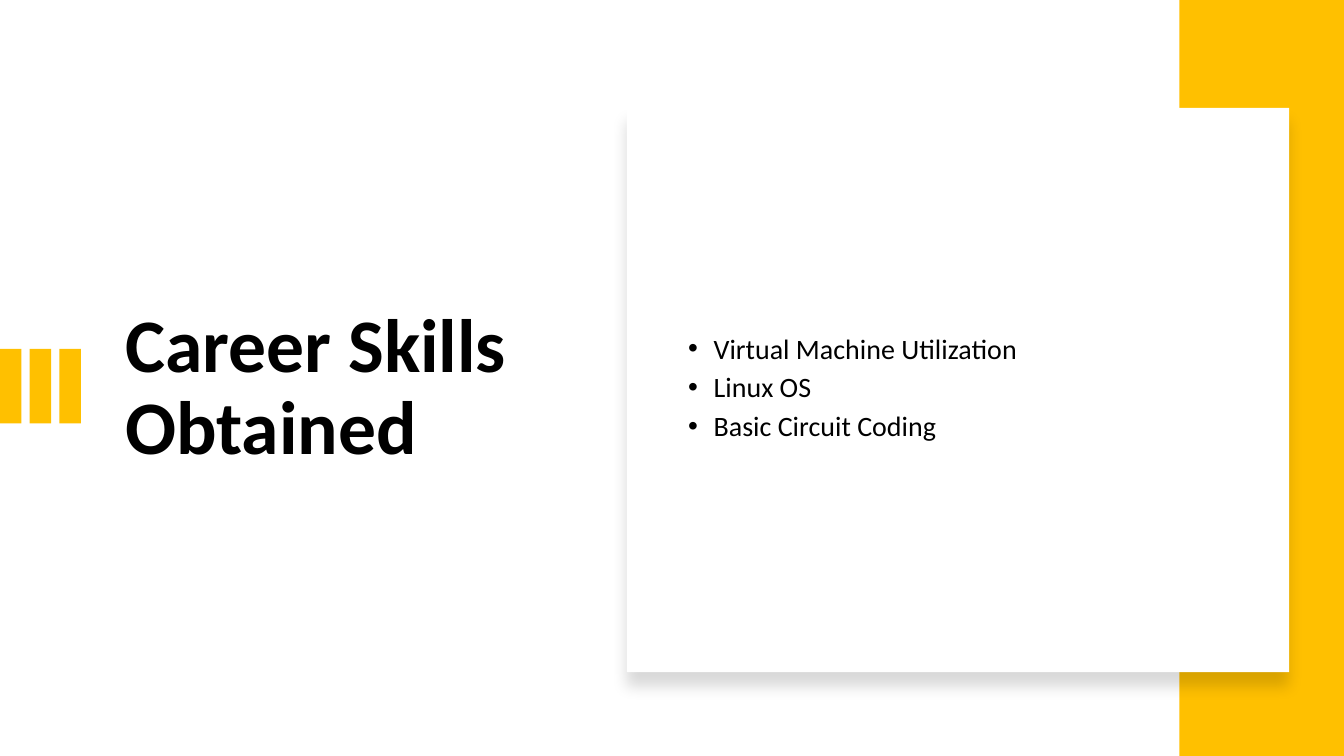
import pptx
import pptx.util
import pptx.dml.color
import pptx.enum.shapes
import pptx.enum.text
import pptx.oxml
import pptx.oxml.ns

Cm = pptx.util.Cm
Pt = pptx.util.Pt
GOLD = pptx.dml.color.RGBColor(0xFF, 0xC0, 0x00)
WHITE = pptx.dml.color.RGBColor(0xFF, 0xFF, 0xFF)
BLACK = pptx.dml.color.RGBColor(0x00, 0x00, 0x00)
SKILLS = ["Virtual Machine Utilization", "Linux OS", "Basic Circuit Coding"]


def add_rectangle(shapes, left, top, width, height, color):
    rectangle = shapes.add_shape(
        pptx.enum.shapes.MSO_SHAPE.RECTANGLE, Cm(left), Cm(top), Cm(width), Cm(height))
    rectangle.shadow.inherit = False
    rectangle.fill.solid()
    rectangle.fill.fore_color.rgb = color
    rectangle.line.fill.background()
    return rectangle


def format_placeholder(placeholder, place, lines, font_format):
    for name, value in place.items():
        setattr(placeholder, name, Cm(value))
    frame = placeholder.text_frame
    frame.text = "\n".join(lines)
    frame.word_wrap = True
    frame.auto_size = pptx.enum.text.MSO_AUTO_SIZE.NONE
    frame.vertical_anchor = pptx.enum.text.MSO_ANCHOR.MIDDLE
    paragraph_format = {"alignment": pptx.enum.text.PP_ALIGN.LEFT, "line_spacing": 0.9,
                        "space_before": Pt(0), "space_after": Pt(6)}
    for para in frame.paragraphs:
        for name, value in paragraph_format.items():
            setattr(para, name, value)
        for span in para.runs:
            span.font.color.rgb = BLACK
            for name, value in font_format.items():
                setattr(span.font, name, value)


deck = pptx.Presentation()
deck.slide_width = Cm(33.87)
deck.slide_height = Cm(19.05)
page = deck.slides.add_slide(deck.slide_layouts[1])
page.background.fill.solid()
page.background.fill.fore_color.rgb = WHITE

# Title
format_placeholder(
    page.shapes.title, {"left": 2.9, "top": 3.71, "width": 10.82, "height": 12.17},
    ["Career Skills Obtained"], {"name": "Calibri", "size": Pt(54), "bold": True})

# Three accent bars at the left edge
accent_bars = page.shapes.add_group_shape()
for index in range(3):
    add_rectangle(accent_bars.shapes, 0.75 * index, 8.79, 0.54, 1.88, GOLD)

# Gold band at the right edge and the white card over it
add_rectangle(page.shapes, 29.72, 0, 4.15, 19.05, GOLD)
card = add_rectangle(page.shapes, 15.8, 2.72, 16.69, 14.22, WHITE)
card_effects = card.element.spPr.find(pptx.oxml.ns.qn("a:effectLst"))
card_effects.append(pptx.oxml.parse_xml(
    f'<a:outerShdw {pptx.oxml.ns.nsdecls("a")} blurRad="{Pt(11)}" dist="{Pt(10)}" '
    'dir="5400000" algn="t" rotWithShape="0">'
    '<a:srgbClr val="000000"><a:alpha val="15000"/></a:srgbClr></a:outerShdw>'))

# Skill list, brought in front of the card
skill_list = page.placeholders[1]
format_placeholder(
    skill_list, {"left": 16.94, "top": 3.71, "width": 14.6, "height": 12.17},
    SKILLS, {"name": "Calibri", "size": Pt(20)})
for para in skill_list.text_frame.paragraphs:
    properties = para._p.get_or_add_pPr()
    properties.set("marL", str(Cm(0.79)))
    properties.set("indent", str(Cm(-0.64)))
    for bullet in ('buFont {} typeface="Arial"', 'buChar {} char="•"'):
        properties.append(pptx.oxml.parse_xml(
            f'<a:{bullet.format(pptx.oxml.ns.nsdecls("a"))}/>'))
skill_list.element.getparent().append(skill_list.element)

deck.save("out.pptx")
